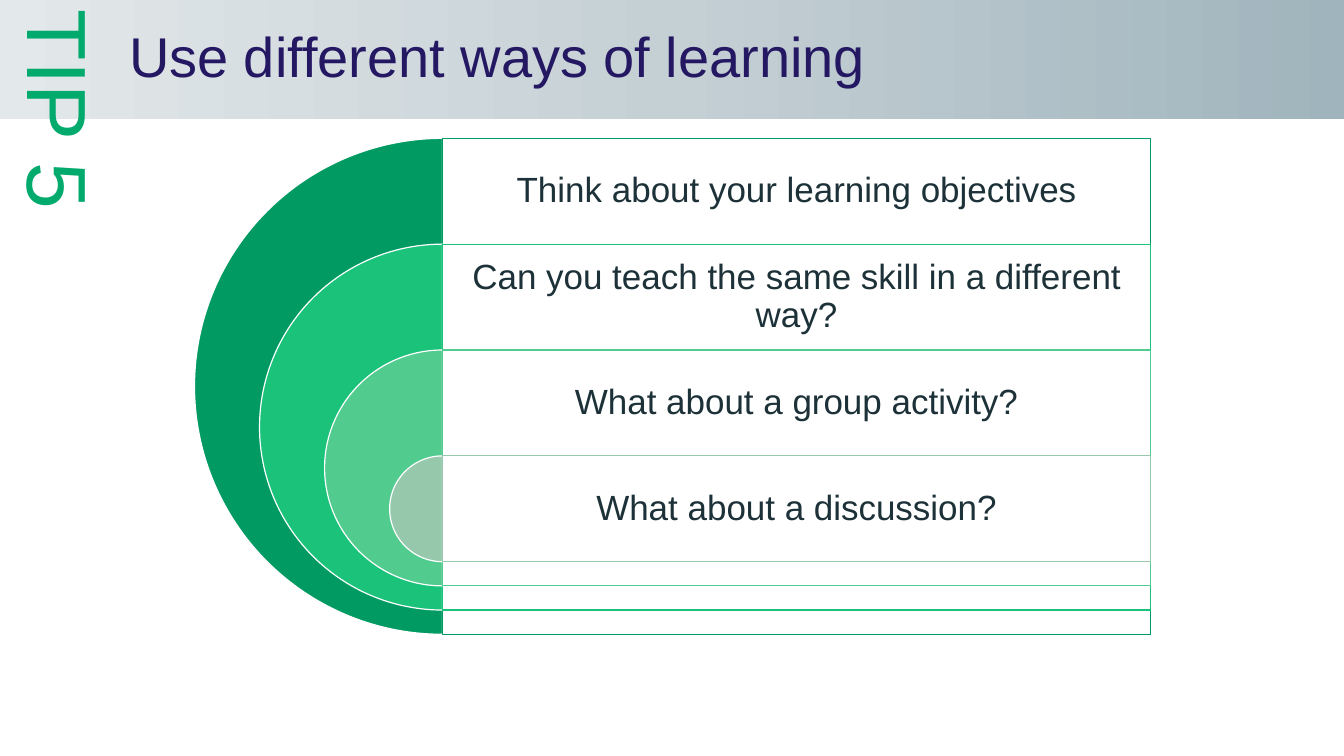
from dataclasses import dataclass

from lxml import etree
from pptx import Presentation
from pptx.dml.color import RGBColor
from pptx.enum.shapes import MSO_SHAPE
from pptx.enum.text import MSO_ANCHOR, PP_ALIGN
from pptx.oxml.ns import qn
from pptx.util import Inches, Pt

RECTANGLE, PIE = MSO_SHAPE.RECTANGLE, MSO_SHAPE.PIE
MIDDLE = MSO_ANCHOR.MIDDLE
LEFT, CENTER = PP_ALIGN.LEFT, PP_ALIGN.CENTER

WHITE = RGBColor(0xFF, 0xFF, 0xFF)
NAVY = RGBColor(0x25, 0x18, 0x63)
TIP_GREEN = RGBColor(0x02, 0xAA, 0x6D)
INK = RGBColor(0x1D, 0x31, 0x38)
BANNER_STOPS = (
    (0, RGBColor(0xA0, 0xB4, 0xBD)),
    (50, RGBColor(0xC5, 0xD0, 0xD5)),
    (100, RGBColor(0xE3, 0xE8, 0xEA)),
)

# The slide is a grid of 100 columns by 100 rows
SLIDE_WIDTH, SLIDE_HEIGHT = Inches(13.33), Inches(7.5)
COLUMN, ROW = SLIDE_WIDTH / 100, SLIDE_HEIGHT / 100

BANNER_HEIGHT = 15.73 * ROW
TIP_WIDTH = 9.08 * COLUMN
PANEL_LEFT, PANEL_WIDTH = 32.93 * COLUMN, 52.66 * COLUMN
FIRST_TOP = 18.3 * ROW
STEP_HEIGHT = 14 * ROW  # height of a label, and of the smallest disc
DISC_GROWTH = 17.2 * ROW  # how much each disc outgrows the one inside it
OUTLINE = Pt(0.85)


@dataclass
class Step:
    text: str
    color: RGBColor


STEPS = (
    Step("Think about your learning objectives", RGBColor(0x02, 0x9A, 0x63)),
    Step("Can you teach the same skill in a different way?", RGBColor(0x1B, 0xC2, 0x7A)),
    Step("What about a group activity?", RGBColor(0x52, 0xCB, 0x8F)),
    Step("What about a discussion?", RGBColor(0x96, 0xC9, 0xAC)),
)


def add_box(page, kind, left: float, top: float, width: float, height: float,
            fill: RGBColor = WHITE, line: RGBColor | None = None):
    box = page.shapes.add_shape(kind, *map(round, (left, top, width, height)))
    box.shadow.inherit = False
    box.fill.solid()
    box.fill.fore_color.rgb = fill
    if line is None:
        box.line.fill.background()
    else:
        box.line.color.rgb = line
        box.line.width = OUTLINE
    return box


def write(box, text: str, *, size: float, color: RGBColor, align=CENTER,
          spacing: float = 1.0, inset: float = 0.1) -> None:
    frame = box.text_frame
    frame.word_wrap = True
    frame.vertical_anchor = MIDDLE
    frame.margin_left = Inches(inset)
    para = frame.paragraphs[0]
    para.alignment = align
    para.line_spacing = spacing
    span = para.add_run()
    span.text = text
    span.font.name = "Arial"
    span.font.size = Pt(size)
    span.font.color.rgb = color


def set_gradient(box, stops) -> None:
    box.fill.gradient()
    box.fill.gradient_angle = 180
    stop_list = box.element.spPr.find(qn("a:gradFill")).find(qn("a:gsLst"))
    for old_stop in list(stop_list):
        stop_list.remove(old_stop)
    for percent, color in stops:
        stop = etree.SubElement(stop_list, qn("a:gs"), pos=str(percent * 1000))
        etree.SubElement(stop, qn("a:srgbClr"), val=str(color))


def set_opacity(box, percent: int) -> None:
    color = box.element.spPr.find(qn("a:solidFill")).find(qn("a:srgbClr"))
    etree.SubElement(color, qn("a:alpha"), val=str(percent * 1000))


def add_banner(page) -> None:
    banner = add_box(page, RECTANGLE, 0, 0, SLIDE_WIDTH, BANNER_HEIGHT)
    set_gradient(banner, BANNER_STOPS)
    write(banner, "Use different ways of learning", size=40, color=NAVY,
          align=LEFT, spacing=0.9, inset=1.28)


def add_tip(page) -> None:
    tip = page.shapes.add_textbox(0, 0, round(TIP_WIDTH), SLIDE_HEIGHT)
    write(tip, "TIP 5", size=60, color=TIP_GREEN, align=LEFT)
    tip.text_frame._txBody.bodyPr.set("vert", "eaVert")


def add_step(page, index: int, step: Step) -> None:
    top = FIRST_TOP + index * STEP_HEIGHT
    size = STEP_HEIGHT + (len(STEPS) - 1 - index) * DISC_GROWTH

    # Half disc, centred on the left edge of the panel
    disc = add_box(page, PIE, PANEL_LEFT - size / 2, top, size, size, step.color, WHITE)
    disc.adjustments[0], disc.adjustments[1] = 54, 162

    # Panel as tall as the disc, with its label in the top part
    panel = add_box(page, RECTANGLE, PANEL_LEFT, top, PANEL_WIDTH, size, WHITE, step.color)
    set_opacity(panel, 90)
    label = page.shapes.add_textbox(
        *map(round, (PANEL_LEFT, top, PANEL_WIDTH, STEP_HEIGHT)))
    write(label, step.text, size=25, color=INK, spacing=0.9)


def main() -> None:
    deck = Presentation()
    deck.slide_width, deck.slide_height = SLIDE_WIDTH, SLIDE_HEIGHT
    page = deck.slides.add_slide(deck.slide_layouts[6])
    add_banner(page)
    add_tip(page)
    for index, step in enumerate(STEPS):
        add_step(page, index, step)
    deck.save("out.pptx")


if __name__ == "__main__":
    main()
